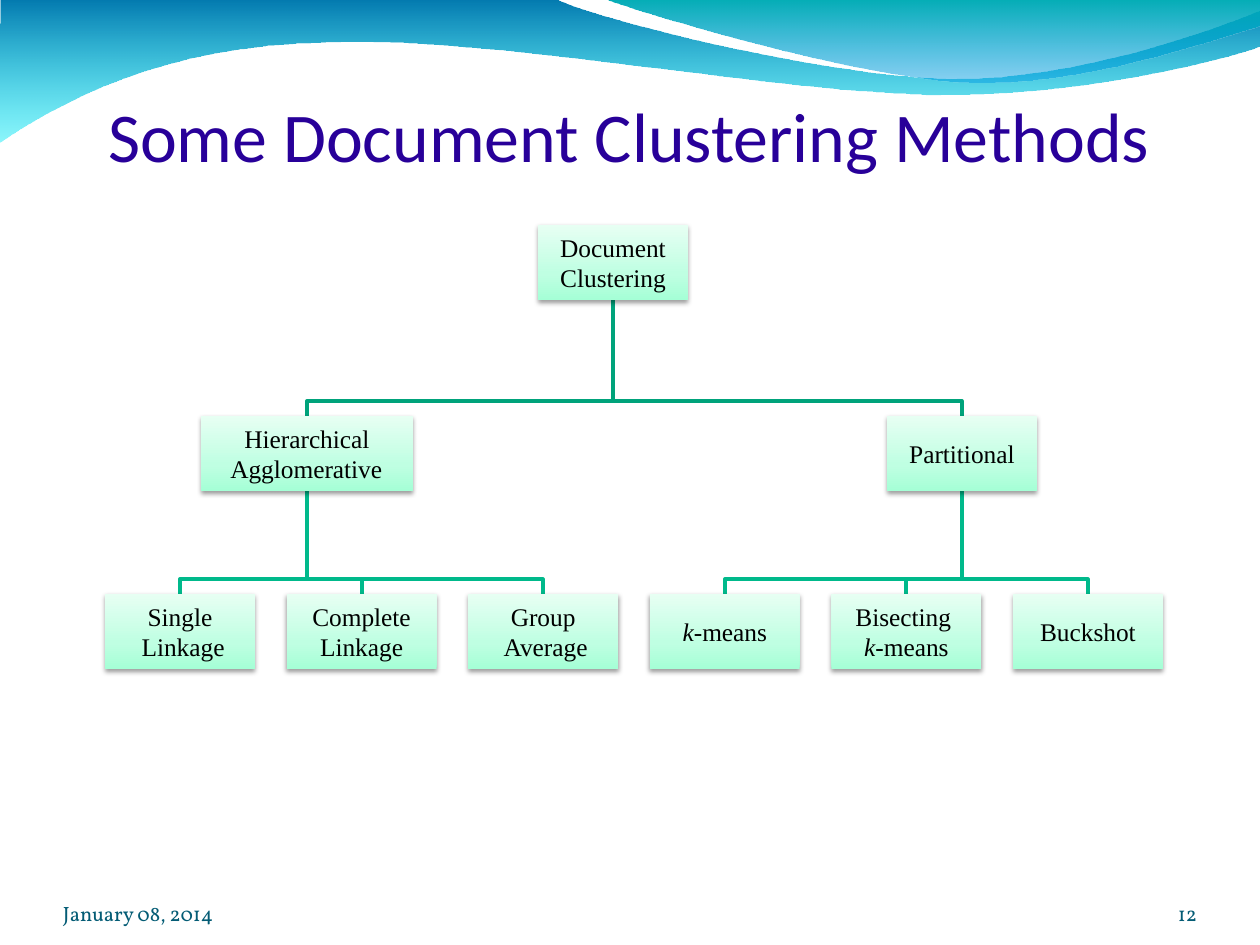
from lxml import etree
from pptx import Presentation
from pptx import util as u
from pptx.dml.color import RGBColor
from pptx.enum import shapes, text
from pptx.oxml import ns, parse_xml

PX = 8000  # EMU per px
SLIDE_WIDTH, SLIDE_HEIGHT = 1260, 945

TITLE_COLOR = RGBColor(0x28, 0x00, 0x99)
FOOTER_COLOR = RGBColor(0x04, 0x5C, 0x75)
BLACK = RGBColor(0x00, 0x00, 0x00)
UPPER_LINK = RGBColor(0x00, 0xA3, 0x7B)
LOWER_LINK = RGBColor(0x00, 0xB9, 0x8B)

# Gradient stops: position in percent, colour, opacity in percent
LEFT_WAVE_STOPS = [(0, RGBColor(0x00, 0x79, 0xAF), 100), (100, RGBColor(0x00, 0xEB, 0xF8), 45)]
RIGHT_WAVE_STOPS = [(0, RGBColor(0x00, 0xAD, 0xB6), 100), (100, RGBColor(0x00, 0x9B, 0xE5), 45)]
NODE_STOPS = [
    (0, RGBColor(0xA5, 0xFF, 0xD6), 100),
    (35, RGBColor(0xBF, 0xFF, 0xE2), 100),
    (100, RGBColor(0xE7, 0xFF, 0xF3), 100),
]

# Each outline is a start point, then lines (one point) and cubic curves (three points)
LEFT_WAVE = [
    [(0, 0)],
    [(554, -1)],
    [(599, 21), (837, 79), (956, 79)],
    [(1076, 79), (1208, 32), (1260, 11)],
    [(1262, 46)],
    [(1239, 55), (1096, 96), (940, 95)],
    [(784, 95), (481, 35), (325, 43)],
    [(162, 45), (57, 104), (-1, 143)],
]
RIGHT_WAVE = [
    [(604, -1)],
    [(643, 14), (860, 78), (969, 82)],
    [(1078, 87), (1212, 40), (1260, 26)],
    [(1260, 0)],
]

NODE_WIDTH, WIDE_NODE_WIDTH, NODE_HEIGHT = 150, 212, 75
LEAF_STEP = 181.6
MIDDLE_TOP, LEAF_TOP = 191, 369
LINK_DROP = 15

# Runs are (text, italic); a label is a list of lines
ROOT_LABEL = [[("Document", False)], [("Clustering", False)]]
BRANCHES = [
    (202, WIDE_NODE_WIDTH, [[("Hierarchical", False)], [(" Agglomerative ", False)]], [
        [[("Single", False)], [(" Linkage", False)]],
        [[("Complete", False)], [("Linkage", False)]],
        [[("Group", False)], [(" Average", False)]],
    ]),
    (857, NODE_WIDTH, [[("Partitional", False)]], [
        [[("k", True), ("-means", False)]],
        [[("Bisecting ", False)], [("k", True), ("-means", False)]],
        [[("Buckshot", False)]],
    ]),
]


def px(length):
    return u.Emu(round(length * PX))


def set_gradient(shape, stops, angle):
    """Fill with a linear gradient; the angle runs clockwise in degrees."""
    shape.fill.background()
    properties = shape._element.spPr
    gradient = etree.Element(ns.qn("a:gradFill"), rotWithShape="1")
    stop_list = etree.SubElement(gradient, ns.qn("a:gsLst"))
    for position, color, opacity in stops:
        stop = etree.SubElement(stop_list, ns.qn("a:gs"), pos=str(position * 1000))
        value = etree.SubElement(stop, ns.qn("a:srgbClr"), val=str(color))
        if opacity < 100:
            etree.SubElement(value, ns.qn("a:alpha"), val=str(opacity * 1000))
    etree.SubElement(gradient, ns.qn("a:lin"), ang=str(angle * 60000), scaled="0")
    properties.replace(properties.find(ns.qn("a:noFill")), gradient)


def add_outline(slide, points, close):
    builder = slide.shapes.build_freeform(*points[0], scale=PX)
    builder.add_line_segments(points[1:], close=close)
    shape = builder.convert_to_shape()
    shape.shadow.inherit = False
    return shape


def add_wave(slide, outline, stops):
    """Draw the outline with straight lines, then bend each three-point segment."""
    shape = add_outline(slide, [point for segment in outline for point in segment], close=True)
    lines = iter(list(shape._element.iter(ns.qn("a:lnTo"))))
    for segment in outline[1:]:
        first, *others = [next(lines) for _ in segment]
        if others:
            first.tag = ns.qn("a:cubicBezTo")
            for line in others:
                first.append(line[0])
                line.getparent().remove(line)
    set_gradient(shape, stops, 90)
    shape.line.fill.background()


def add_run(paragraph, words, font_name, size, color, italic=False):
    run = paragraph.add_run()
    run.text = words
    run.font.name = font_name
    run.font.size = u.Pt(size)
    run.font.italic = italic
    run.font.color.rgb = color


def set_frame(frame, anchor, margins):
    frame.word_wrap = True
    frame.auto_size = text.MSO_AUTO_SIZE.NONE
    frame.vertical_anchor = anchor
    frame.margin_left, frame.margin_top, frame.margin_right, frame.margin_bottom = map(px, margins)


def add_title(slide, left, top, width, height):
    title = slide.shapes.title
    title.left, title.top, title.width, title.height = map(px, (left, top, width, height))
    set_frame(title.text_frame, text.MSO_ANCHOR.BOTTOM, (0, 7, 0, 0))
    paragraph = title.text_frame.paragraphs[0]
    paragraph.alignment = text.PP_ALIGN.CENTER
    add_run(paragraph, "Some Document Clustering Methods", "Calibri", 44, TITLE_COLOR)


def add_link(slide, start, end, color):
    """Elbow line from the foot of a parent to the head of a child."""
    bend = end[1] - LINK_DROP
    link = add_outline(slide, [start, (start[0], bend), (end[0], bend), end], close=False)
    link.fill.background()
    link.line.color.rgb = color
    link.line.width = u.Pt(2)


def add_node(slide, center, top, width, label):
    node = slide.shapes.add_shape(shapes.MSO_SHAPE.RECTANGLE, px(center - width / 2), px(top),
                                  px(width), px(NODE_HEIGHT))
    set_gradient(node, NODE_STOPS, 270)
    node.line.fill.background()
    node.shadow.inherit = False
    node._element.spPr.find(ns.qn("a:effectLst")).append(parse_xml(
        f'<a:outerShdw {ns.nsdecls("a")} blurRad="39370" dist="20000" dir="5400000" rotWithShape="0">'
        '<a:srgbClr val="000000"><a:alpha val="38000"/></a:srgbClr></a:outerShdw>'))
    frame = node.text_frame
    set_frame(frame, text.MSO_ANCHOR.MIDDLE, (1, 1, 1, 1))
    for index, line in enumerate(label):
        paragraph = frame.paragraphs[0] if index == 0 else frame.add_paragraph()
        paragraph.alignment = text.PP_ALIGN.CENTER
        for words, italic in line:
            add_run(paragraph, words, "Times New Roman", 16, BLACK, italic)


def add_tree(slide, left, top):
    root_center = left + 508
    nodes = [(root_center, top, NODE_WIDTH, ROOT_LABEL)]
    leaf_center = left + NODE_WIDTH / 2
    for offset, width, label, leaves in BRANCHES:
        center = left + offset
        nodes.append((center, top + MIDDLE_TOP, width, label))
        add_link(slide, (root_center, top + NODE_HEIGHT), (center, top + MIDDLE_TOP), UPPER_LINK)
        for leaf in leaves:
            nodes.append((leaf_center, top + LEAF_TOP, NODE_WIDTH, leaf))
            add_link(slide, (center, top + MIDDLE_TOP + NODE_HEIGHT),
                     (leaf_center, top + LEAF_TOP), LOWER_LINK)
            leaf_center += LEAF_STEP
    for node in nodes:
        add_node(slide, *node)


def add_footer(slide, left, top, width, height):
    items = [
        ("January 08, 2014", left, 294, text.PP_ALIGN.LEFT),
        ("12", left + width - 105, 105, text.PP_ALIGN.RIGHT),
    ]
    for words, item_left, item_width, alignment in items:
        box = slide.shapes.add_textbox(px(item_left), px(top), px(item_width), px(height))
        set_frame(box.text_frame, text.MSO_ANCHOR.BOTTOM, (0, 0, 0, 0))
        paragraph = box.text_frame.paragraphs[0]
        paragraph.alignment = alignment
        add_run(paragraph, words, "Vollkorn", 13, FOOTER_COLOR)


def main():
    presentation = Presentation()
    presentation.slide_width, presentation.slide_height = px(SLIDE_WIDTH), px(SLIDE_HEIGHT)
    slide = presentation.slides.add_slide(presentation.slide_layouts[5])
    add_wave(slide, LEFT_WAVE, LEFT_WAVE_STOPS)
    add_wave(slide, RIGHT_WAVE, RIGHT_WAVE_STOPS)
    add_title(slide, 63, 38, 1133, 139)
    add_tree(slide, 105, 225)
    add_footer(slide, 63, 876, 1134, 50)
    presentation.save("out.pptx")


if __name__ == "__main__":
    main()
